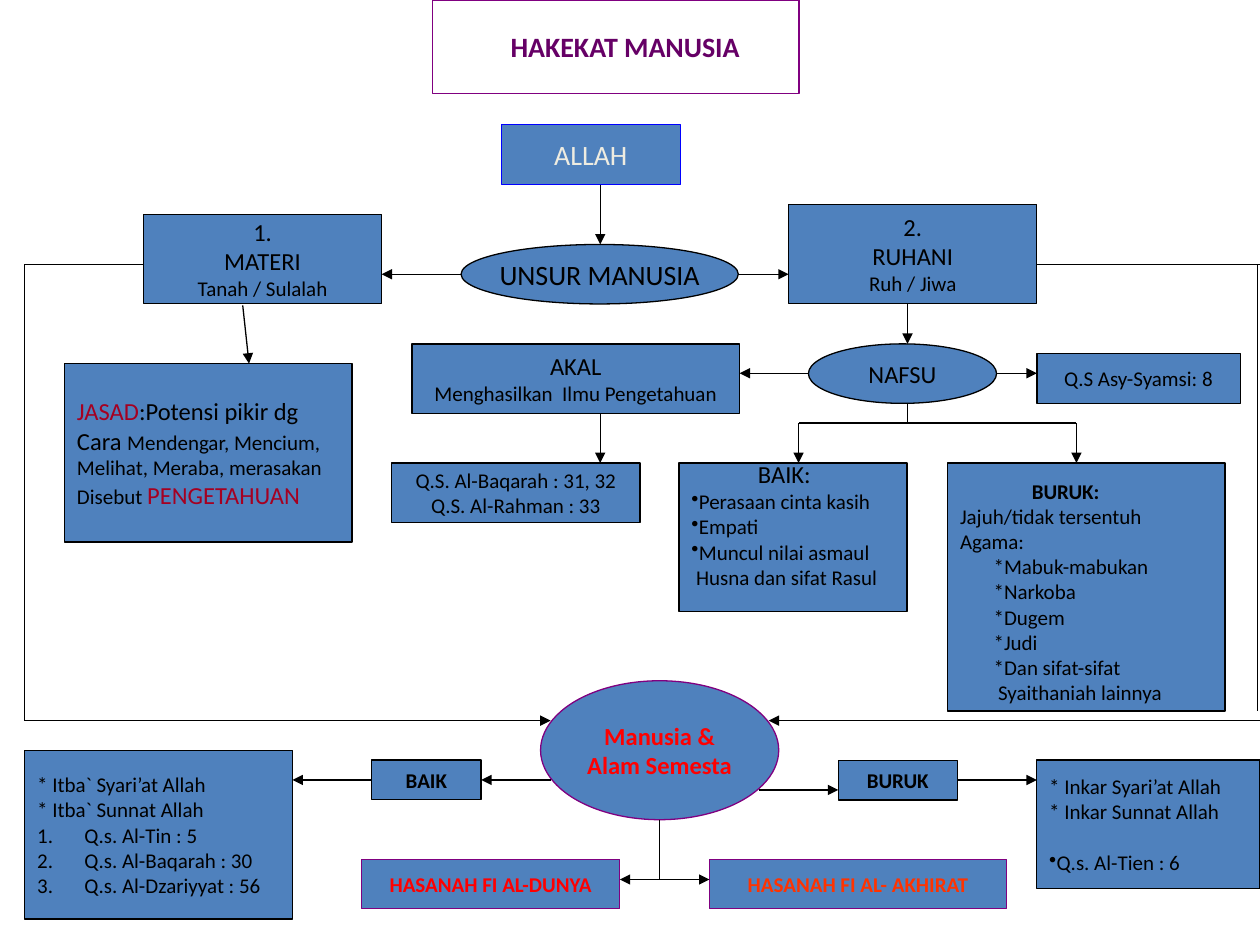
"""Build the HAKEKAT MANUSIA concept map slide."""
import pptx
import pptx.util
import pptx.dml.color
import pptx.enum.shapes
import pptx.enum.text
import pptx.oxml.ns
import lxml.etree

Pt = pptx.util.Pt
qn = pptx.oxml.ns.qn
C = {"fill": "4F81BD", "black": "000000", "purple": "800080", "plum": "660066", "blue": "0000FF",
     "cream": "EEECE1", "maroon": "A50021", "red": "FF0000", "orange": "FF3300"}


def rgb(name):
    return pptx.dml.color.RGBColor.from_string(C[name])


def add_line(s, points, head=False, tail=False):
    last = len(points) - 2
    for i, (a, b) in enumerate(zip(points, points[1:])):
        cx = s.shapes.add_connector(pptx.enum.shapes.MSO_CONNECTOR.STRAIGHT,
                                    Pt(a[0]), Pt(a[1]), Pt(b[0]), Pt(b[1]))
        cx.line.color.rgb = rgb("black")
        cx.line.width = Pt(0.75)
        ln = cx.line._get_or_add_ln()
        if head and i == 0:
            lxml.etree.SubElement(ln, qn("a:headEnd"), type="triangle")
        if tail and i == last:
            lxml.etree.SubElement(ln, qn("a:tailEnd"), type="triangle")
        lxml.etree.SubElement(cx._element.spPr, qn("a:effectLst"))


prs = pptx.Presentation()
prs.slide_width, prs.slide_height = Pt(720), Pt(540)
s = prs.slides.add_slide(prs.slide_layouts[6])

K = "black"
boxes = [
    ("rect", (247, 0, 209.5, 53.3), "purple", "c", (3.6, 3.6),
     [(11, "", [("HAKEKAT MANUSIA", 16, "plum", True)])]),
    ("rect", (286.5, 71.3, 102.2, 34), "blue", "c", (3.6, 3.6), [(0, "", [("ALLAH", 16, "cream", False)])]),
    ("oval", (263.5, 139.7, 158.4, 34), K, "c", (3.6, 3.6), [(0, "", [("UNSUR MANUSIA", 16, K, False)])]),
    ("rect", (82, 122.4, 136.1, 51.1), K, "c", (3.6, 3.6),
     [(0, "", [("1.", 14, K, False)]), (0, "", [("MATERI", 14, K, False)]),
      (0, "", [("Tanah / Sulalah", 12, K, False)])]),
    ("rect", (450.7, 116.7, 141.8, 56.8), K, "c", (3.6, 3.6),
     [(0, "", [("2.", 14, K, False)]), (0, "", [("RUHANI", 14, K, False)]),
      (0, "", [("Ruh / Jiwa", 12, K, False)])]),
    ("rect", (235.4, 196.5, 187.3, 39.7), K, "c", (3.6, 3.6),
     [(0, "", [("AKAL", 14, K, False)]), (0, "", [("Menghasilkan  Ilmu Pengetahuan", 12, K, False)])]),
    ("oval", (462, 196.5, 107.5, 34), K, "c", (3.6, 3.6), [(0, "", [("NAFSU", 14, K, False)])]),
    ("rect", (388, 264.6, 130.3, 85), K, "l", (0, 15),
     [(38, "", [("BAIK:", 14, K, False)])]
     + [(0, "•", [(t, 12, K, False)]) for t in ("Perasaan cinta kasih", "Empati", "Muncul nilai asmaul")]
     + [(2.7, "", [("Husna dan sifat Rasul", 12, K, False)])]),
    ("rect", (541.5, 264.6, 158.6, 141.8), K, "l", (5, 0),
     [(41, "", [("BURUK:", 12, K, True)])]
     + [(0, "", [(t, 12, K, False)]) for t in ("Jajuh/tidak tersentuh", "Agama:")]
     + [(19.2, "", [(t, 12, K, False)])
        for t in ("*Mabuk-mabukan", "*Narkoba", "*Dugem", "*Judi", "*Dan sifat-sifat")]
     + [(21.7, "", [("Syaithaniah lainnya", 12, K, False)])]),
    ("rect", (592.5, 202.2, 116.2, 28.3), K, "c", (3.6, 3.6), [(0, "", [("Q.S Asy-Syamsi: 8", 12, K, False)])]),
    ("rect", (36.9, 207.8, 164.2, 102), K, "l", (3.6, 3.6),
     [(0, "", [("JASAD", 14, "maroon", False), (":Potensi pikir dg", 14, K, False)]),
      (0, "", [("Cara ", 14, K, False), ("Mendengar, Mencium,", 12, K, False)]),
      (0, "", [("Melihat, Meraba, merasakan", 12, K, False)]),
      (0, "", [("Disebut ", 12, K, False), ("PENGETAHUAN", 14, "maroon", False)])]),
    ("rect", (223.9, 264.6, 141.8, 34), K, "c", (3.6, 3.6),
     [(0, "", [(t, 12, K, False)]) for t in ("Q.S. Al-Baqarah : 31, 32", "Q.S. Al-Rahman : 33")]),
    ("oval", (308.9, 389, 136.1, 79.4), "purple", "c", (3.6, 3.6),
     [(0, "", [(t, 14, "red", True)]) for t in ("Manusia &", "Alam Semesta")]),
    ("rect", (479, 434.5, 68, 22.7), K, "c", (3.6, 3.6), [(0, "", [("BURUK", 12, K, True)])]),
    ("rect", (212.4, 434.2, 62.6, 22.7), K, "c", (3.6, 3.6), [(0, "", [("BAIK", 12, K, True)])]),
    ("rect", (206.6, 491, 147.6, 28.3), "purple", "c", (3.6, 3.6),
     [(0, "", [("HASANAH FI AL-DUNYA", 12, "red", True)])]),
    ("rect", (405.4, 491, 169.9, 28.3), "purple", "c", (3.6, 3.6),
     [(0, "", [("HASANAH FI AL- AKHIRAT", 12, "orange", True)])]),
    ("rect", (14.2, 428.7, 153, 96.4), K, "l", (3.6, 3.6),
     [(0, "", [(t, 12, K, False)]) for t in ("* Itba` Syari’at Allah", "* Itba` Sunnat Allah")]
     + [(27, "1.", [(t, 12, K, False)])
        for t in ("Q.s. Al-Tin : 5", "Q.s. Al-Baqarah : 30", "Q.s. Al-Dzariyyat : 56")]),
    ("rect", (592.5, 434.2, 127.5, 73.4), K, "l", (3.6, 3.6),
     [(0, "", [(t, 12, K, False)]) for t in ("* Inkar Syari’at Allah", "* Inkar Sunnat Allah")]
     + [(0, "•", [("Q.s. Al-Tien : 6", 12, K, False)])]),
]

shapes = {"rect": pptx.enum.shapes.MSO_SHAPE.RECTANGLE, "oval": pptx.enum.shapes.MSO_SHAPE.OVAL}
aligns = {"c": pptx.enum.text.PP_ALIGN.CENTER, "l": pptx.enum.text.PP_ALIGN.LEFT}
for kind, box, edge, align, (top, bottom), paras in boxes:
    sp = s.shapes.add_shape(shapes[kind], *[Pt(v) for v in box])
    sp.shadow.inherit = False
    if box[1] == 0:
        sp.fill.background()
    else:
        sp.fill.solid()
        sp.fill.fore_color.rgb = rgb("fill")
    sp.line.color.rgb = rgb(edge)
    sp.line.width = Pt(0.75)
    tf = sp.text_frame
    tf.word_wrap = align == "l"
    tf.vertical_anchor = pptx.enum.text.MSO_ANCHOR.MIDDLE
    tf.margin_left = tf.margin_right = Pt(7.2)
    tf.margin_top, tf.margin_bottom = Pt(top), Pt(bottom)
    for i, (left, bullet, runs) in enumerate(paras):
        p = tf.add_paragraph() if i else tf.paragraphs[0]
        p.alignment = aligns[align]
        if runs[0][0].startswith("Q.s. Al-Tien"):
            p.space_before = Pt(14.6)
        pPr = p._p.get_or_add_pPr()
        pPr.set("marL", str(Pt(left)))
        pPr.set("indent", str(-Pt(left) if bullet else 0))
        if bullet == "1.":
            lxml.etree.SubElement(pPr, qn("a:buFont"), typeface="+mj-lt")
            lxml.etree.SubElement(pPr, qn("a:buAutoNum"), type="arabicPeriod")
        elif bullet:
            lxml.etree.SubElement(pPr, qn("a:buChar"), char=bullet)
        for text, size, color, bold in runs:
            r = p.add_run()
            r.text = text
            r.font.name = "Calibri"
            r.font.size = Pt(size)
            r.font.bold = bold
            r.font.color.rgb = rgb(color)

arrows = [
    [(343, 105.5), (343, 139.7)],
    [(422.3, 156.7), (450.7, 156.7)],
    [(263.5, 156.7), (218.1, 156.7)],
    [(720, 411.8), (439.2, 411.8)],
    [(82, 151), (14.2, 151), (14.2, 411.8), (314.6, 411.8)],
    [(433.6, 451.4), (479, 451.4)],
    [(314.6, 445.7), (275, 445.7)],
    [(518.6, 173.5), (518.6, 196.5)],
    [(569.5, 213.3), (592.5, 213.3)],
    [(462, 213.3), (422.7, 213.3)],
    [(138.7, 174.5), (142.3, 207.8)],
    [(343, 236.2), (343, 264.6)],
    [(518.6, 241.7), (456.3, 241.7), (456.3, 264.6)],
    [(518.6, 241.7), (615.1, 241.7), (615.1, 264.6)],
    [(212.4, 445.7), (167.2, 445.7)],
    [(547, 445.7), (592.5, 445.7)],
]
for points in arrows:
    add_line(s, points, tail=True)

for points in ([(592.5, 151), (720, 151)], [(718.6, 151), (718.6, 406.2)],
               [(518.6, 230.5), (518.6, 241.7)], [(377, 468.4), (377, 502.6)]):
    add_line(s, points)
add_line(s, [(354.2, 502.6), (405.4, 502.6)], head=True, tail=True)

prs.save("out.pptx")
